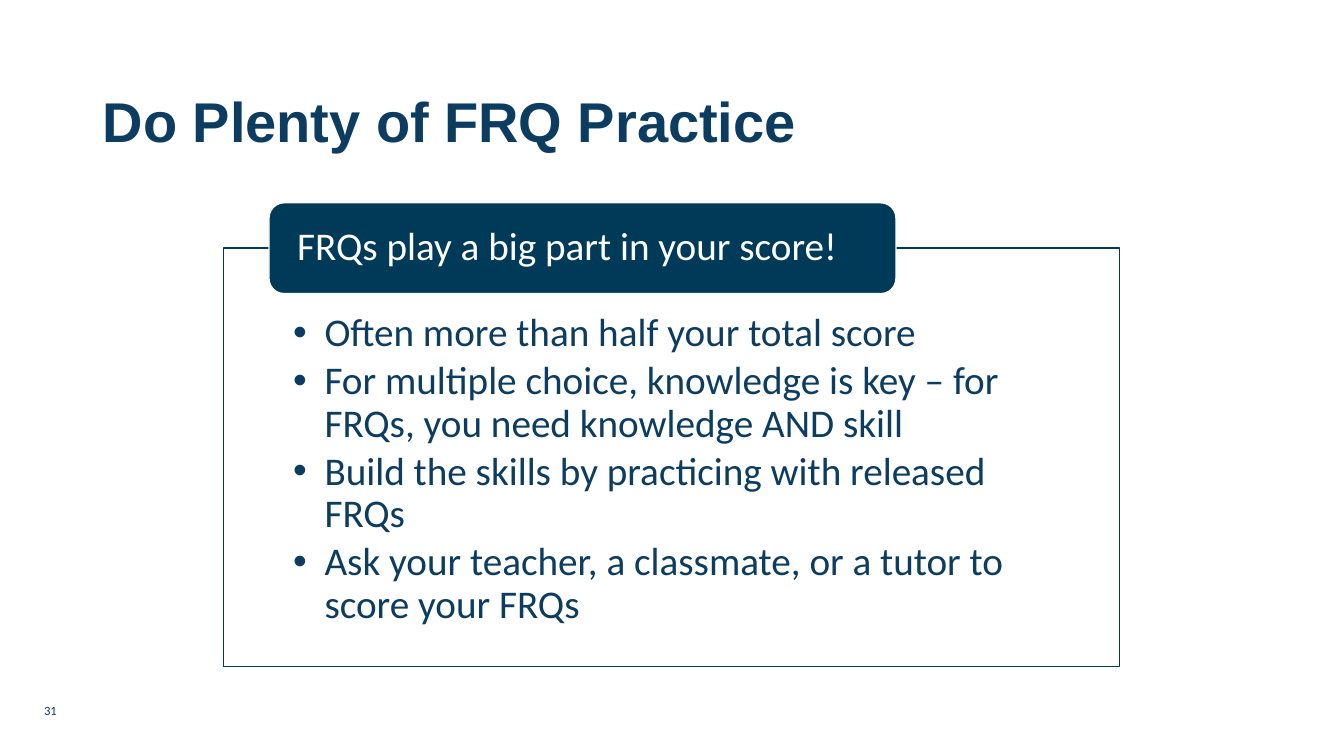
"""Build the slide about FRQ practice."""
from dataclasses import dataclass

import pptx
import pptx.dml.color
import pptx.enum.shapes
import pptx.enum.text
import pptx.oxml
import pptx.oxml.ns
import pptx.util
from pptx.util import Cm


@dataclass(frozen=True)
class Theme:
    """Colours, fonts and type sizes of the slide."""

    ink: str = "0C3C60"
    navy: str = "003A59"
    white: str = "FFFFFF"
    heading_font: str = "Arial"
    body_font: str = "Calibri"
    title_size: int = 40
    body_size: int = 28
    number_size: int = 9


THEME = Theme()
ADVICE = (
    "Often more than half your total score",
    "For multiple choice, knowledge is key – for FRQs, you need knowledge AND skill",
    "Build the skills by practicing with released FRQs",
    "Ask your teacher, a classmate, or a tutor to score your FRQs",
)


def rgb(colour):
    """Return a colour object for a hex string."""
    return pptx.dml.color.RGBColor.from_string(colour)


def style(paragraph, size, colour, font=THEME.body_font, bold=False, spacing=0.9):
    """Format a paragraph and its runs."""
    paragraph.alignment = pptx.enum.text.PP_ALIGN.LEFT
    paragraph.line_spacing = spacing
    for run in paragraph.runs:
        run.font.name = font
        run.font.size = pptx.util.Pt(size)
        run.font.bold = bold
        run.font.color.rgb = rgb(colour)


def set_frame(frame, anchor, insets):
    """Set wrapping, anchor and insets (left, top, right, bottom) in centimetres."""
    frame.word_wrap = True
    frame.auto_size = pptx.enum.text.MSO_AUTO_SIZE.NONE
    frame.vertical_anchor = anchor
    frame.margin_left, frame.margin_top, frame.margin_right, frame.margin_bottom = map(Cm, insets)


def add_bullet(paragraph, indent):
    """Give a paragraph a round bullet with a hanging indent."""
    properties = paragraph._p.get_or_add_pPr()
    properties.set("marL", str(indent))
    properties.set("indent", str(-indent))
    pptx.oxml.ns.qn("a:buChar")
    for markup in ('buFont {} typeface="Arial"', 'buChar {} char="•"'):
        tag = "<a:" + markup.format(pptx.oxml.ns.nsdecls("a")) + "/>"
        properties.append(pptx.oxml.parse_xml(tag))


def add_panel(slide, preset, box, fill, outline):
    """Add a filled and outlined shape without shadow."""
    panel = slide.shapes.add_shape(preset, *map(Cm, box))
    panel.shadow.inherit = False
    panel.fill.solid()
    panel.fill.fore_color.rgb = rgb(fill)
    panel.line.color.rgb = rgb(outline)
    panel.line.width = pptx.util.Pt(1)
    return panel


def add_title(slide, wording):
    """Place and format the title placeholder."""
    title = slide.shapes.title
    title.left, title.top, title.width, title.height = map(Cm, (2.34, 1.88, 29.21, 2.49))
    title.text_frame.text = wording
    set_frame(title.text_frame, pptx.enum.text.MSO_ANCHOR.MIDDLE, (0.25, 0.13, 0.25, 0.13))
    style(title.text_frame.paragraphs[0], THEME.title_size, THEME.ink, THEME.heading_font, True)


def add_advice(slide, lines):
    """Add the framed list of advice."""
    advice = add_panel(slide, pptx.enum.shapes.MSO_SHAPE.RECTANGLE,
                       (5.64, 6.25, 22.58, 10.54), THEME.white, THEME.navy)
    frame = advice.text_frame
    set_frame(frame, pptx.enum.text.MSO_ANCHOR.TOP, (1.75, 1.63, 1.75, 0.56))
    frame.text = "\n".join(lines)
    for paragraph in frame.paragraphs:
        add_bullet(paragraph, Cm(0.79))
        style(paragraph, THEME.body_size, THEME.ink)
        paragraph.space_after = pptx.util.Pt(4.2)


def add_claim(slide, wording):
    """Add the rounded label on the upper edge of the advice frame."""
    claim = add_panel(slide, pptx.enum.shapes.MSO_SHAPE.ROUNDED_RECTANGLE,
                      (6.78, 5.11, 15.8, 2.29), THEME.navy, THEME.white)
    set_frame(claim.text_frame, pptx.enum.text.MSO_ANCHOR.MIDDLE, (0.6, 0, 0.6, 0))
    claim.text_frame.text = wording
    style(claim.text_frame.paragraphs[0], THEME.body_size, THEME.white)


def add_page_number(slide, number):
    """Add the page number at the lower left."""
    page = slide.shapes.add_textbox(*map(Cm, (0.86, 17.58, 5.72, 0.58)))
    set_frame(page.text_frame, pptx.enum.text.MSO_ANCHOR.TOP, (0.25, 0.13, 0.25, 0.13))
    page.text_frame.text = number
    style(page.text_frame.paragraphs[0], THEME.number_size, THEME.ink, spacing=1.0)


def main():
    """Build and save the presentation."""
    deck = pptx.Presentation()
    deck.slide_width, deck.slide_height = Cm(33.87), Cm(19.05)
    slide = deck.slides.add_slide(deck.slide_layouts.get_by_name("Title Only"))
    add_title(slide, "Do Plenty of FRQ Practice")
    add_page_number(slide, "31")
    add_advice(slide, ADVICE)
    add_claim(slide, "FRQs play a big part in your score!")
    deck.save("out.pptx")


if __name__ == "__main__":
    main()
